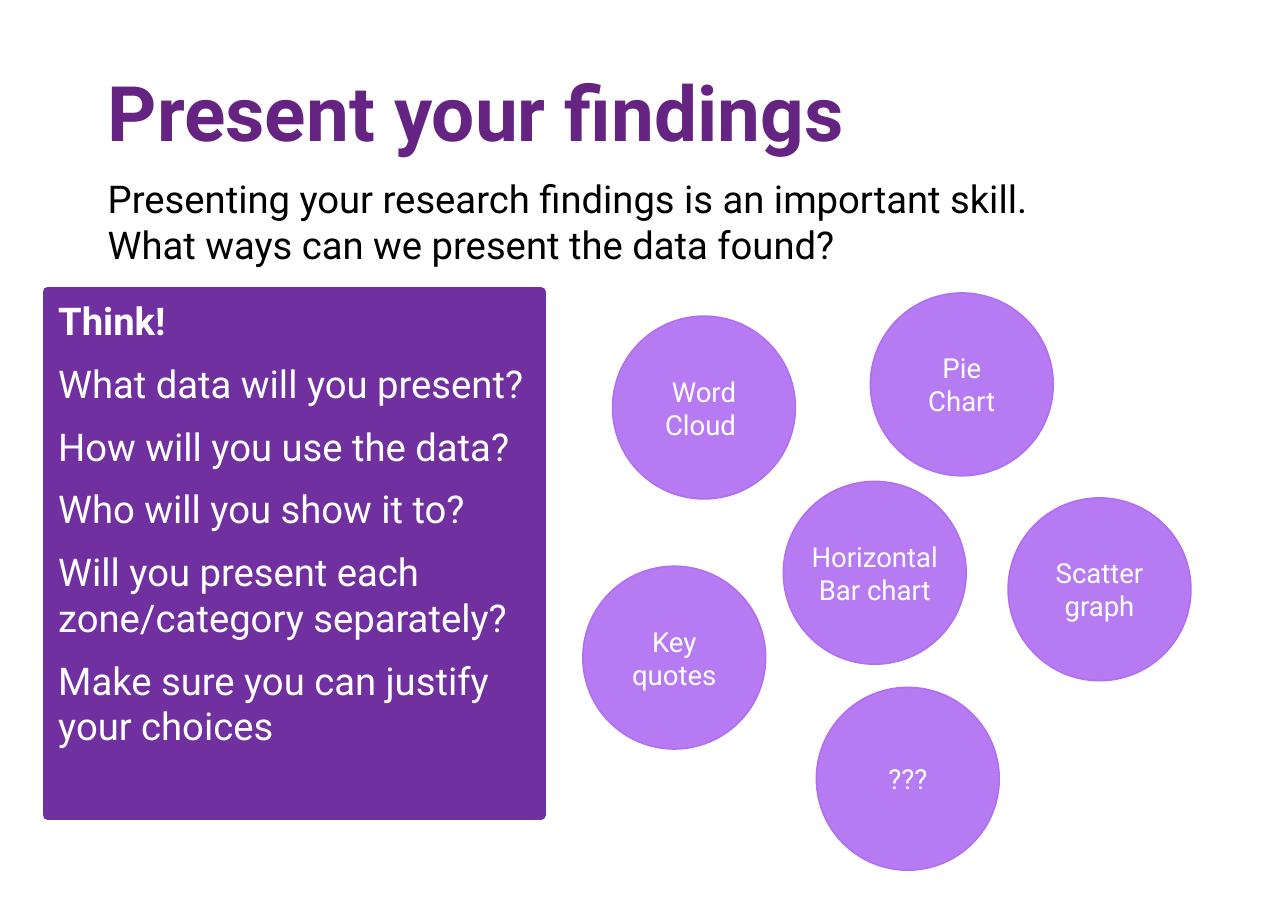
from lxml.etree import SubElement
from pptx import Presentation
from pptx.dml.color import RGBColor
from pptx.enum.shapes import MSO_SHAPE
from pptx.enum.text import MSO_ANCHOR, PP_ALIGN
from pptx.oxml.ns import qn
from pptx.util import Inches, Pt

FONT = "Roboto"
COLORS = {
    "title": "662482",
    "body": "000000",
    "panel": "7030A0",
    "circle": "B06FF1",
    "light": "FFFFFF",
}
DIAMETER = 1.66


def color(name):
    return RGBColor.from_string(COLORS[name])


def add_run(p, text, size, color_name, bold=False):
    r = p.add_run()
    r.text = text
    r.font.name = FONT
    r.font.size = Pt(size)
    r.font.bold = bold
    r.font.color.rgb = color(color_name)


def add_text(s, box, text, size, color_name, bold=False, anchor=MSO_ANCHOR.TOP):
    tf = s.shapes.add_textbox(*map(Inches, box)).text_frame
    tf.word_wrap = True
    tf.vertical_anchor = anchor
    p = tf.paragraphs[0]
    add_run(p, text, size, color_name, bold)
    return p


def add_filled(s, preset, box, color_name, line_width):
    sp = s.shapes.add_shape(preset, *map(Inches, box))
    sp.shadow.inherit = False
    sp.fill.solid()
    sp.fill.fore_color.rgb = color(color_name)
    sp.line.color.rgb = color(color_name)
    sp.line.width = Pt(line_width)
    sp.text_frame.word_wrap = True
    return sp


def add_heading(s, left, top):
    title = add_text(s, (left, top, 9.94, 0.92), "Present your findings",
                     50, "title", True, MSO_ANCHOR.BOTTOM)
    title.line_spacing = 0.9
    add_text(s, (left, top + 0.98, 8.77, 1.11),
             "Presenting your research findings is an important skill. "
             "What ways can we present the data found?", 25, "body")


def add_think_panel(s, box, lines):
    sp = add_filled(s, MSO_SHAPE.RECTANGLE, box, "panel", 6.25)
    tf = sp.text_frame
    tf.vertical_anchor = MSO_ANCHOR.TOP
    for i, line in enumerate(lines):
        p = tf.add_paragraph() if i else tf.paragraphs[0]
        p.alignment = PP_ALIGN.LEFT
        if i:
            p.space_before = Pt(11)
        add_run(p, line, 25, "light", bold=i == 0)


def add_circle(s, left, top, label, inset):
    sp = add_filled(s, MSO_SHAPE.OVAL, (left, top, DIAMETER, DIAMETER), "circle", 1)
    # Slight transparency of the fill
    fill_color = sp.fill._xPr.find(qn("a:solidFill"))[0]
    SubElement(fill_color, qn("a:alpha"), val="92000")
    tf = sp.text_frame
    tf.vertical_anchor = MSO_ANCHOR.MIDDLE
    if not inset:
        tf.margin_left = tf.margin_right = tf.margin_top = tf.margin_bottom = 0
    p = tf.paragraphs[0]
    p.alignment = PP_ALIGN.CENTER
    add_run(p, label, 18, "light")


def add_circles(s, left, top, circles):
    for dx, dy, label, inset in circles:
        add_circle(s, left + dx, top + dy, label, inset)


def main():
    prs = Presentation()
    prs.slide_width, prs.slide_height = Inches(11.69), Inches(8.27)
    s = prs.slides.add_slide(prs.slide_layouts[6])

    # Title and introduction
    add_heading(s, 0.88, 0.56)

    # Questions to think about
    add_think_panel(s, (0.43, 2.65, 4.48, 4.75), [
        "Think!",
        "What data will you present?",
        "How will you use the data?",
        "Who will you show it to?",
        "Will you present each zone/category separately?",
        "Make sure you can justify your choices",
    ])

    # Ways to present: offset in the cluster, label, default insets
    add_circles(s, 5.29, 2.66, [
        (1.82, 1.71, "Horizontal Bar chart", False),
        (2.61, 0, "Pie Chart", True),
        (3.86, 1.86, "Scatter graph", True),
        (0.27, 0.21, "Word Cloud ", True),
        (0, 2.48, "Key quotes", True),
        (2.12, 3.58, "???", False),
    ])

    prs.save("out.pptx")


if __name__ == "__main__":
    main()
